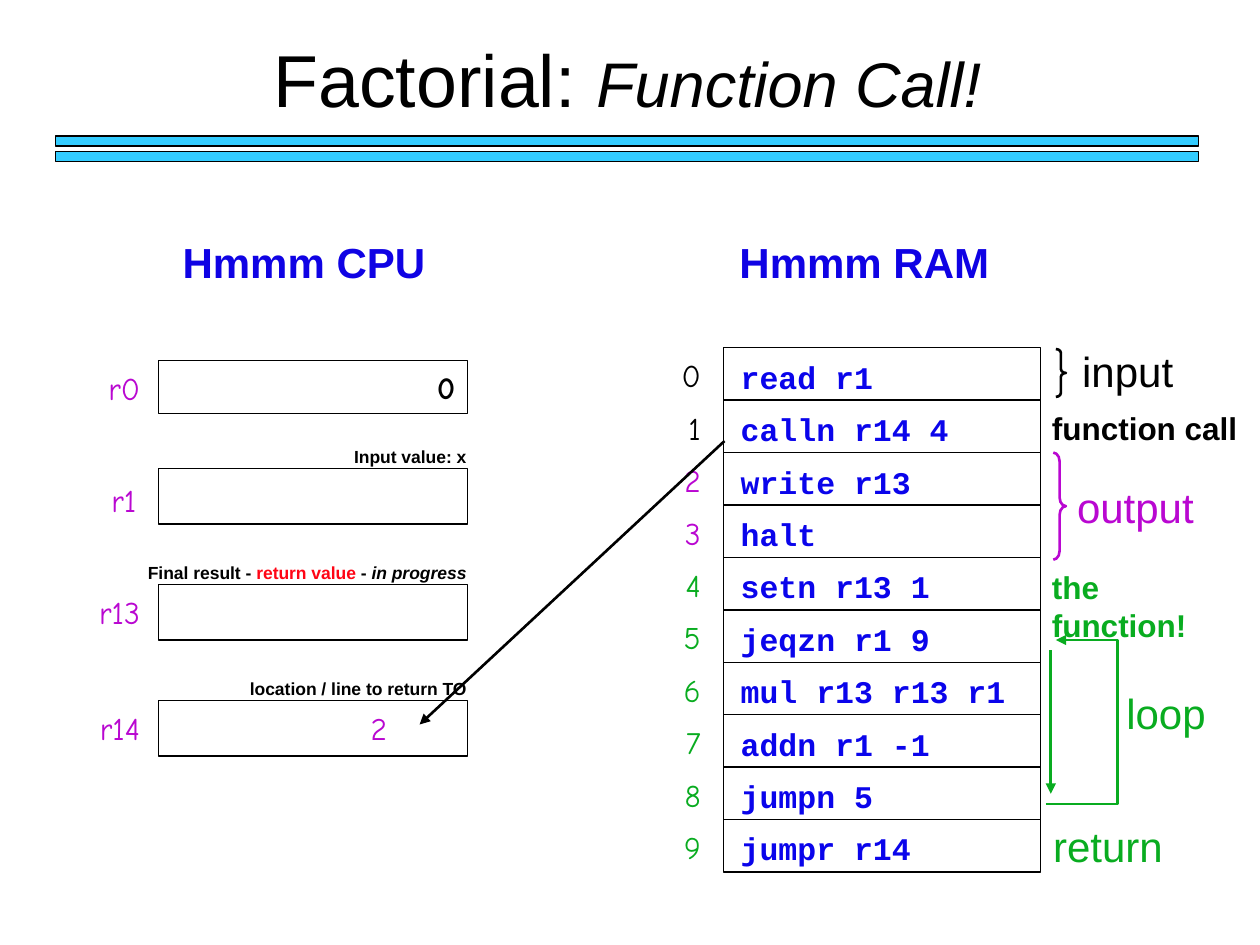
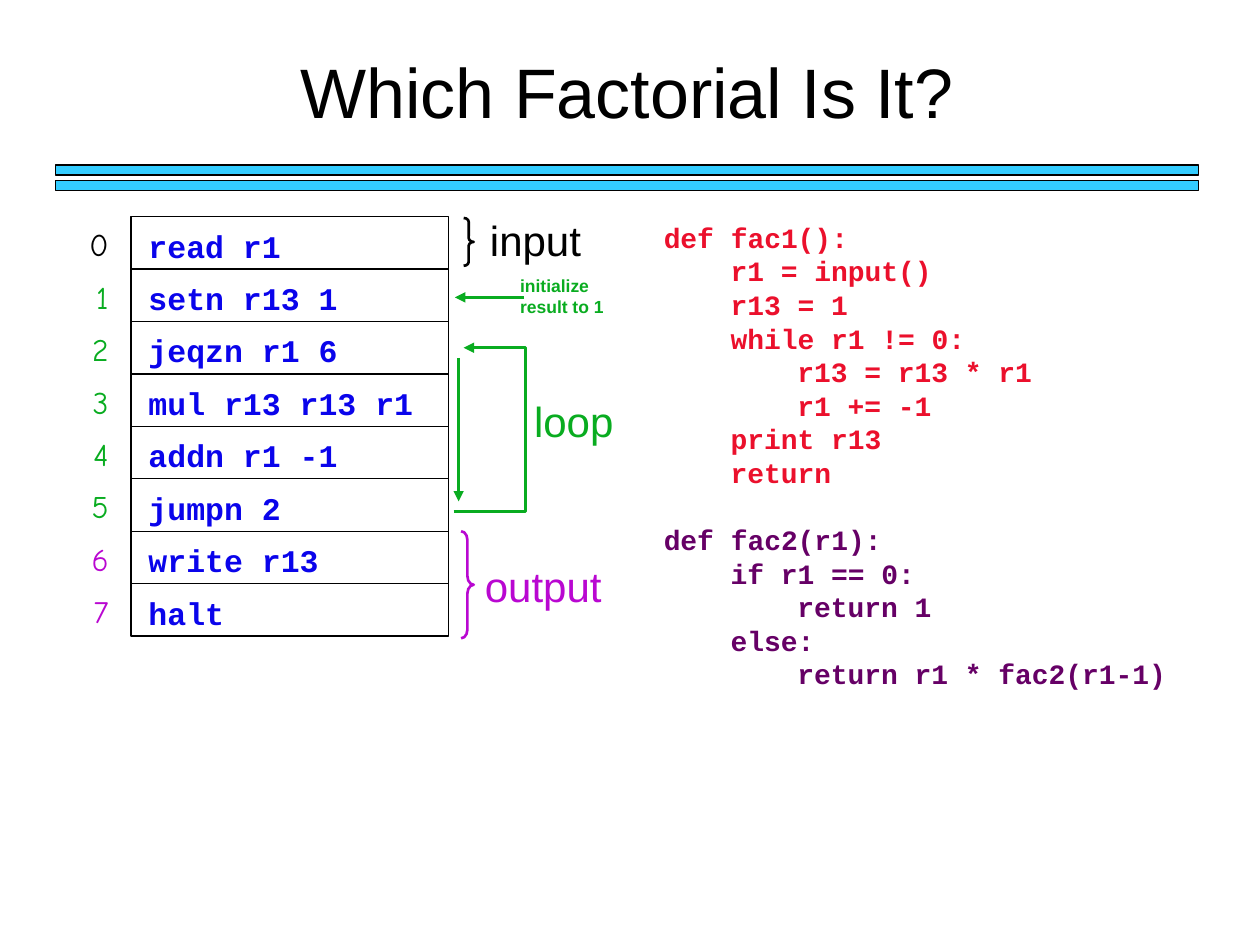
import pptx
import pptx.util
import pptx.dml.color
import pptx.enum.shapes
import pptx.enum.text
from pptx.oxml.ns import qn
from lxml import etree

Inches, Pt = pptx.util.Inches, pptx.util.Pt
rgb = pptx.dml.color.RGBColor.from_string
SHAPE = pptx.enum.shapes.MSO_SHAPE
STRAIGHT = pptx.enum.shapes.MSO_CONNECTOR.STRAIGHT
ALIGN = pptx.enum.text.PP_ALIGN
MIDDLE = pptx.enum.text.MSO_ANCHOR.MIDDLE

BLACK, GREEN, PURPLE = "000000", "09AC20", "B907D1"
HEADING, CODE, BAR = "0F02E4", "0A04EB", "33CCFF"
RED, PLUM, ALERT = "EB102C", "660066", "FF0515"
COMIC, MONO = "Comic Neue", "Courier New"
PITCH = 0.416  # height of one RAM cell
INDENT = 0.53  # one level of program indentation


def put_text(s, text, at, shape=None, size=18, font="Arial", color=BLACK,
             bold=False, align=ALIGN.LEFT, wrap=True):
    """Write one paragraph; text is a string or a list of (text, format) runs."""
    at = [Inches(v) for v in at]
    shape = shape or s.shapes.add_textbox(*at)
    shape.left, shape.top, shape.width, shape.height = at
    tf = shape.text_frame
    tf.word_wrap = wrap
    p = tf.paragraphs[0]
    p.alignment = align
    for part, fmt in [(text, {})] if isinstance(text, str) else text:
        r = p.add_run()
        r.text = part
        r.font.name = font
        r.font.size = Pt(fmt.get("size", size))
        r.font.bold = bold
        r.font.italic = fmt.get("italic", False)
        r.font.color.rgb = rgb(fmt.get("color", color))
    return shape


def outline(shape, color=BLACK, width=0.75, fill=None, arrow=False):
    """Set line, fill and arrowhead, and drop the theme shadow."""
    shape.line.color.rgb = rgb(color)
    shape.line.width = Pt(width)
    spPr = shape._element.spPr
    if arrow:
        etree.SubElement(spPr.find(qn("a:ln")), qn("a:tailEnd"), type="triangle")
    if hasattr(shape, "fill"):
        if fill:
            shape.fill.solid()
            shape.fill.fore_color.rgb = rgb(fill)
        else:
            shape.fill.background()
        shape.shadow.inherit = False
    else:
        etree.SubElement(spPr, qn("a:effectLst"))


prs = pptx.Presentation()
prs.slide_width, prs.slide_height = Inches(10), Inches(7.5)

call_program = [
    ("read r1", BLACK), ("calln r14 4", BLACK), ("write r13", PURPLE),
    ("halt", PURPLE), ("setn r13 1", GREEN), ("jeqzn r1 9", GREEN),
    ("mul r13 r13 r1", GREEN), ("addn r1 -1", GREEN), ("jumpn 5", GREEN),
    ("jumpr r14", GREEN)]
loop_program = [
    ("read r1", BLACK), ("setn r13 1", GREEN), ("jeqzn r1 6", GREEN),
    ("mul r13 r13 r1", GREEN), ("addn r1 -1", GREEN), ("jumpn 2", GREEN),
    ("write r13", PURPLE), ("halt", PURPLE)]

# title, title size, title place, bar top, RAM left and top, program, output row, loop top
pages = [
    ([("Factorial: ", {}), ("Function Call!", {"size": 36, "italic": True})], 42,
     (0.79, 0.22, 8.38, 0.8), 1.08, 5.74, 2.76, call_program, 2, 5.08),
    ("Which Factorial Is It?", 40,
     (0.44, 0.33, 9.07, 0.77), 1.31, 1.04, 1.72, loop_program, 6, 2.76)]

# Parts that both slides share
slides = []
for title, size, place, bar_top, left, top, program, output_row, loop_top in pages:
    s = prs.slides.add_slide(prs.slide_layouts[5])
    slides.append(s)
    put_text(s, title, place, shape=s.shapes.title, size=size, align=ALIGN.CENTER)
    s.shapes.title.text_frame.vertical_anchor = MIDDLE

    # Double bar under the title
    for y in (bar_top, bar_top + 0.12):
        bar = s.shapes.add_shape(SHAPE.RECTANGLE, Inches(0.44), Inches(y),
                                 Inches(9.07), Inches(0.08))
        outline(bar, fill=BAR)

    # RAM cells with addresses and instructions
    for i, (instruction, color) in enumerate(program):
        y = top + i * PITCH
        cell = s.shapes.add_shape(SHAPE.RECTANGLE, Inches(left), Inches(y),
                                  Inches(2.52), Inches(PITCH))
        outline(cell)
        put_text(s, str(i), (left - 0.75, y + 0.02, 0.67, 0.4), font=COMIC,
                 color=color, align=ALIGN.RIGHT)
        put_text(s, instruction, (left + 0.04, y + 0.03, 2.45, 0.4), font=MONO,
                 color=CODE, bold=True)

    # Braces for input and output
    output_top = top + output_row * PITCH
    for x, y, w, h, bend, color in [
            (left + 2.64, top + 0.01, 0.08, 0.38, 0.39, BLACK),
            (left + 2.62, output_top, 0.1, 0.85, 0.69, PURPLE)]:
        brace = s.shapes.add_shape(SHAPE.RIGHT_BRACE, Inches(x), Inches(y),
                                   Inches(w), Inches(h))
        brace.adjustments[0] = bend
        outline(brace, color, 1.5)
    put_text(s, "input", (left + 2.75, top - 0.07, 0.99, 0.5), size=24)
    put_text(s, "output", (left + 2.71, output_top + 0.18, 1.13, 0.5), size=24,
             color=PURPLE)

    # Loop: path back to the test, and arrow down through the body
    path_back = s.shapes.build_freeform(Inches(left + 2.56), Inches(loop_top + 1.3))
    path_back.add_line_segments(
        [(Inches(left + dx), Inches(loop_top + dy))
         for dx, dy in [(3.13, 1.3), (3.13, 0), (2.64, 0)]], close=False)
    outline(path_back.convert_to_shape(), GREEN, 1.5, arrow=True)
    down = s.shapes.add_connector(STRAIGHT, Inches(left + 2.6), Inches(loop_top + 0.08),
                                  Inches(left + 2.6), Inches(loop_top + 1.22))
    outline(down, GREEN, 1.5, arrow=True)
    put_text(s, "loop", (left + 3.1, loop_top + 0.33, 0.99, 0.5), size=24, color=GREEN)

# Slide 1: headings and side labels
s = slides[0]
for heading, x in [("Hmmm CPU", 1.35), ("Hmmm RAM", 5.77)]:
    put_text(s, heading, (x, 1.83, 2.29, 0.5), size=24, color=HEADING, bold=True)
put_text(s, "function call", (8.25, 3.2, 1.71, 0.4), bold=True)
put_text(s, "the function!", (8.25, 4.46, 1.6, 0.4), color=GREEN, bold=True)
put_text(s, "return", (8.26, 6.46, 1.21, 0.5), size=24, color=GREEN)

# Slide 1: CPU registers, each with a caption above
progress = [("Final result - ", {}), ("return value", {"color": ALERT}), (" - ", {}),
            ("in progress", {"italic": True})]
for name, label_x, y, h, caption in [
        ("r0", 0.53, 2.86, 0.42, None),
        ("r1", 0.5, 3.72, 0.44, "Input value: x"),
        ("r13", 0.53, 4.64, 0.44, progress),
        ("r14", 0.53, 5.56, 0.44, "location / line to return TO")]:
    register = s.shapes.add_shape(SHAPE.RECTANGLE, Inches(1.26), Inches(y),
                                  Inches(2.45), Inches(h))
    outline(register)
    label_y = 3.77 if name == "r1" else y + 0.02
    put_text(s, name, (label_x, label_y, 0.68, 0.4), font=COMIC, color=PURPLE,
             align=ALIGN.RIGHT)
    if caption:
        put_text(s, caption, (0.94, y - 0.23, 2.86, 0.27), size=10, bold=True,
                 align=ALIGN.RIGHT)

# Slide 1: register values and the saved return address
put_text(s, "0", (3.04, 2.87, 0.67, 0.4), font=COMIC, bold=True, align=ALIGN.RIGHT)
put_text(s, "2", (2.5, 5.58, 0.67, 0.4), font=COMIC, color=PURPLE, align=ALIGN.RIGHT)
save = s.shapes.add_connector(STRAIGHT, Inches(5.75), Inches(3.5),
                              Inches(3.33), Inches(5.75))
outline(save, BLACK, 1.5, arrow=True)

# Slide 2: note on the initial value
s = slides[1]
put_text(s, "initialize result to 1", (4.03, 2.13, 0.99, 0.43), size=10, color=GREEN,
         bold=True)
note = s.shapes.add_connector(STRAIGHT, Inches(4.16), Inches(2.36),
                              Inches(3.61), Inches(2.36))
outline(note, GREEN, 1.5, arrow=True)

# Slide 2: the two Python functions, as (indent level, line)
fac1 = [(0, "def fac1():"), (1, "r1 = input()"), (1, "r13 = 1"),
        (1, "while r1 != 0:"), (2, "r13 = r13 * r1"), (2, "r1 += -1"),
        (1, "print r13"), (1, "return")]
fac2 = [(0, "def fac2(r1):"), (1, "if r1 == 0:"), (2, "return 1"), (1, "else:"),
        (2, "return r1 * fac2(r1-1)")]
tf = s.shapes.add_textbox(Inches(5.17), Inches(1.7), Inches(4.24),
                          Inches(4.11)).text_frame
tf.word_wrap = False
for function, color in [(fac1, RED), (fac2, PLUM)]:
    for i, (level, line) in enumerate(function):
        first = function is fac1 and i == 0
        p = tf.paragraphs[0] if first else tf.add_paragraph()
        p.line_spacing = Pt(19.2)
        p.space_before = Pt(19.2 if function is fac2 and i == 0 else 0)
        p._p.get_or_add_pPr().set("marL", str(Inches(level * INDENT)))
        r = p.add_run()
        r.text = line
        r.font.name, r.font.size, r.font.bold = MONO, Pt(16), True
        r.font.color.rgb = rgb(color)

prs.save("out.pptx")
